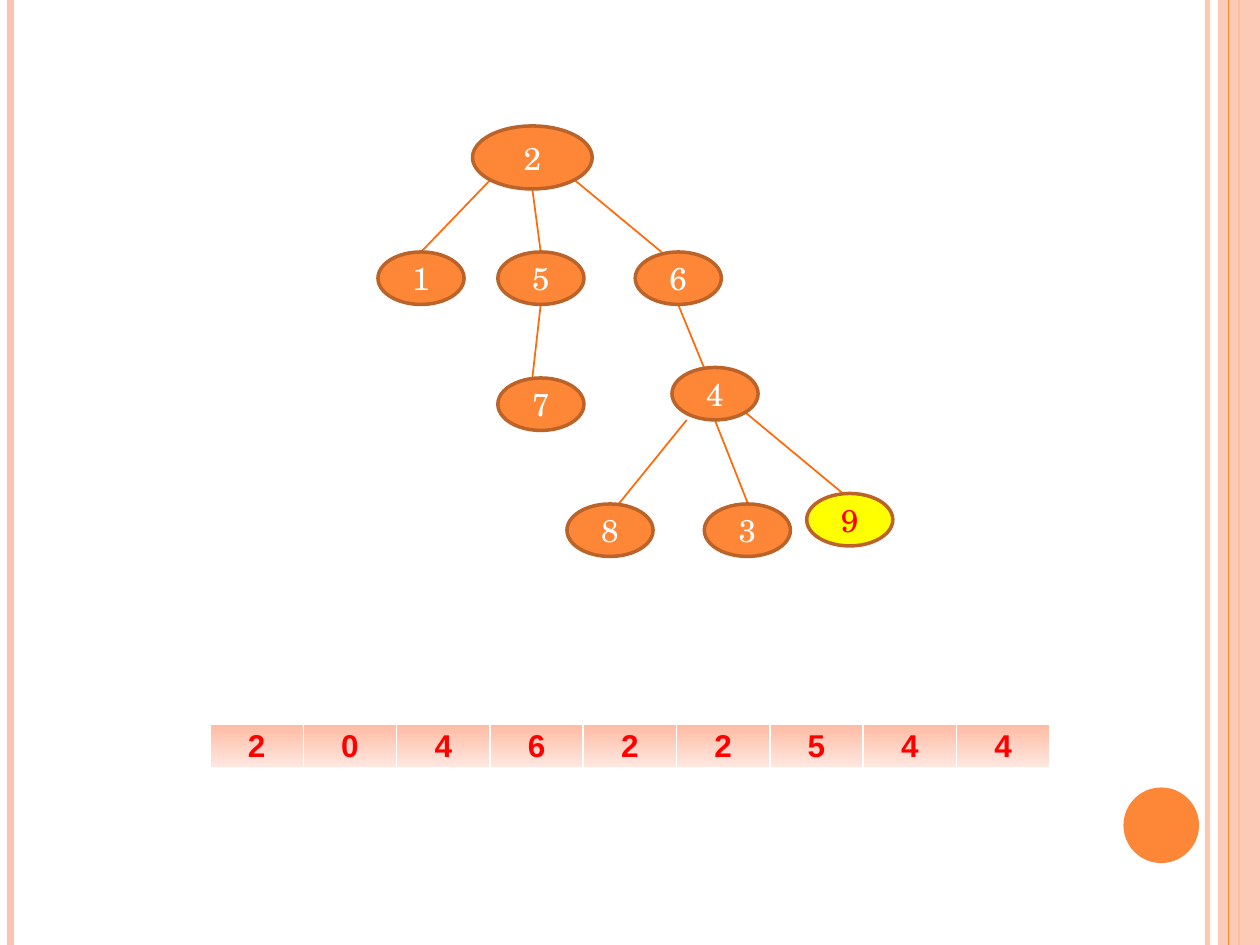
"""Build a slide with a numbered tree above its array of parent nodes."""
from lxml.etree import SubElement
from pptx import Presentation
from pptx.dml.color import RGBColor
from pptx.enum.shapes import MSO_CONNECTOR, MSO_SHAPE
from pptx.enum.text import MSO_ANCHOR, PP_ALIGN
from pptx.oxml import parse_xml
from pptx.oxml.ns import nsdecls, qn
from pptx.util import Pt

COLORS = {
    "peach": "FEC3AE", "orange": "FE8637", "edge": "FF6B0A", "outline": "BC6329",
    "yellow": "FFFF00", "red": "FF0000", "white": "FFFFFF",
    "cell_top": "FFBBA3", "cell_bottom": "FFEAE4",
}
RGB = {name: RGBColor.from_string(value) for name, value in COLORS.items()}

prs = Presentation()
prs.slide_width, prs.slide_height = Pt(720), Pt(540)
s = prs.slides.add_slide(prs.slide_layouts[6])


def add_line(x1, y1, x2, y2, color, width):
    line = s.shapes.add_connector(
        MSO_CONNECTOR.STRAIGHT, Pt(x1), Pt(y1), Pt(x2), Pt(y2))
    line.line.color.rgb = RGB[color]
    line.line.width = Pt(width)
    SubElement(line._element.spPr, qn("a:effectLst"))
    return line


def add_filled(kind, x, y, w, h, color):
    sp = s.shapes.add_shape(kind, Pt(x), Pt(y), Pt(w), Pt(h))
    sp.shadow.inherit = False
    sp.fill.solid()
    sp.fill.fore_color.rgb = RGB[color]
    sp.line.fill.background()
    return sp


stripe = add_line(690, 0, 690, 540, "peach", 3)
add_line(6, 0, 6, 540, "peach", 4.5)
add_line(708, 0, 708, 540, "orange", 1.5)
band = add_filled(MSO_SHAPE.RECTANGLE, 696, 0, 24, 540, "peach")
for sp, alpha in ((stripe, 93000), (band, 87000)):
    color = next(sp._element.spPr.iter(qn("a:srgbClr")))
    SubElement(color, qn("a:alpha"), val=str(alpha))
add_line(702, 0, 702, 540, "orange", 0.75)
add_filled(MSO_SHAPE.OVAL, 642, 450, 43.2, 43.2, "orange")

edges = [
    (280, 103, 240.6, 144), (304.2, 108, 309, 144), (328.5, 103, 378, 144),
    (309, 174, 304.2, 216), (387.5, 174, 402.3, 210),
    (392.4, 240, 353.5, 288), (408.5, 240, 427.5, 288), (425.8, 235.6, 481.7, 282),
]
for edge in edges:
    add_line(*edge, "edge", 1)

nodes = [
    ("2", 270, 72), ("1", 216, 144), ("5", 284.5, 144), ("6", 363, 144),
    ("7", 284.5, 216), ("4", 384, 210), ("8", 324, 288), ("3", 402.5, 288),
    ("9", 461, 282),
]
for label, x, y in nodes:
    w, h = (68.4, 36) if label == "2" else (49.2, 30)
    fill, ink = ("yellow", "red") if label == "9" else ("orange", "white")
    sp = add_filled(MSO_SHAPE.OVAL, x, y, w, h, fill)
    sp.line.color.rgb = RGB["outline"]
    sp.line.width = Pt(2)
    tf = sp.text_frame
    tf.vertical_anchor = MSO_ANCHOR.MIDDLE
    p = tf.paragraphs[0]
    p.text = label
    p.alignment = PP_ALIGN.CENTER
    p.font.name = "TeX Gyre Schola"
    p.font.size = Pt(18)
    p.font.color.rgb = RGB[ink]

parents = "204622544"
table = s.shapes.add_table(
    1, len(parents), Pt(120), Pt(414), Pt(480), Pt(25.7)).table
table.first_row = table.horz_banding = False
for cell, parent in zip(table.rows[0].cells, parents):
    cell.margin_top = cell.margin_bottom = Pt(2.4)
    cell.vertical_anchor = MSO_ANCHOR.MIDDLE
    cell.fill.gradient()
    cell.fill.gradient_angle = 270
    for stop, name in zip(cell.fill.gradient_stops, ("cell_top", "cell_bottom")):
        stop.color.rgb = RGB[name]
    tcPr = cell._tc.get_or_add_tcPr()
    for i, (side, width) in enumerate((("L", 1), ("R", 1), ("T", 1), ("B", 3))):
        tcPr.insert(i, parse_xml(
            f'<a:ln{side} {nsdecls("a")} w="{Pt(width)}"><a:solidFill>'
            f'<a:srgbClr val="{COLORS["white"]}"/></a:solidFill></a:ln{side}>'))
    p = cell.text_frame.paragraphs[0]
    p.text = parent
    p.alignment = PP_ALIGN.CENTER
    p.font.name = "Arial"
    p.font.size = Pt(18)
    p.font.bold = True
    p.font.color.rgb = RGB["red"]

prs.save("out.pptx")
